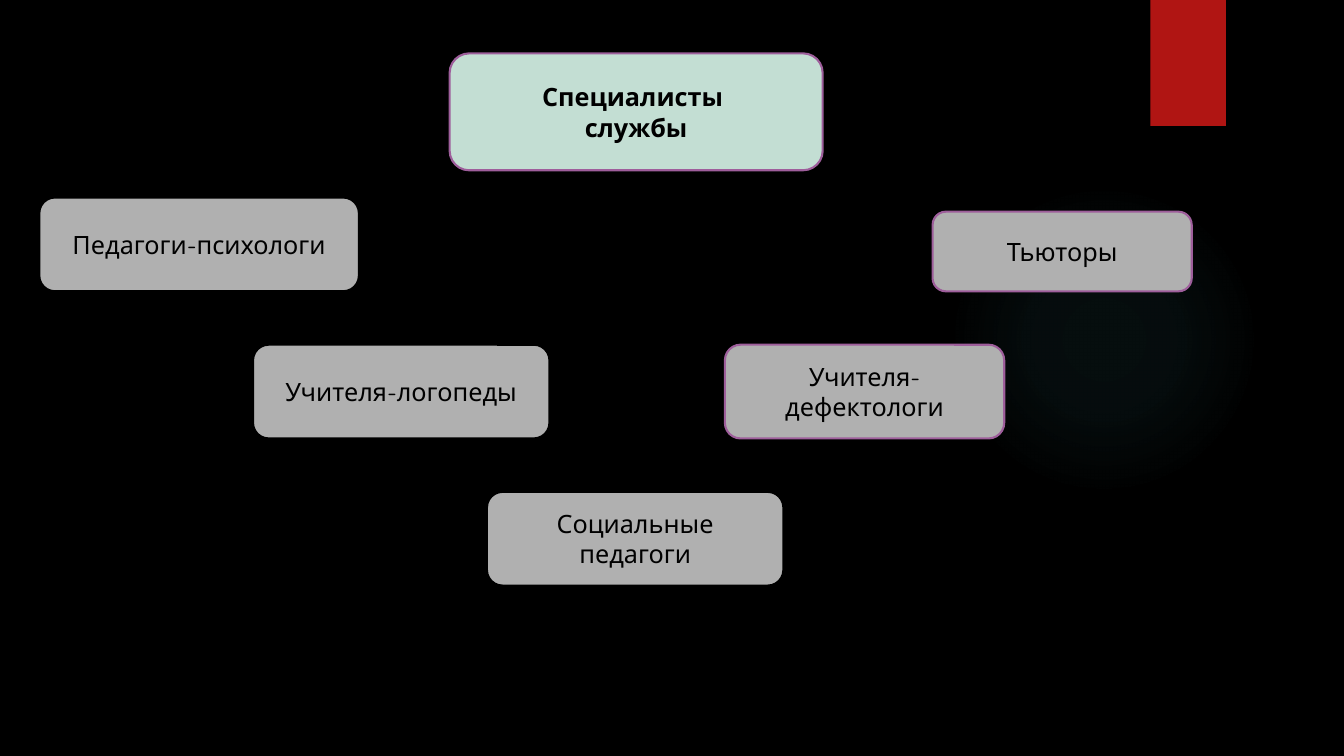
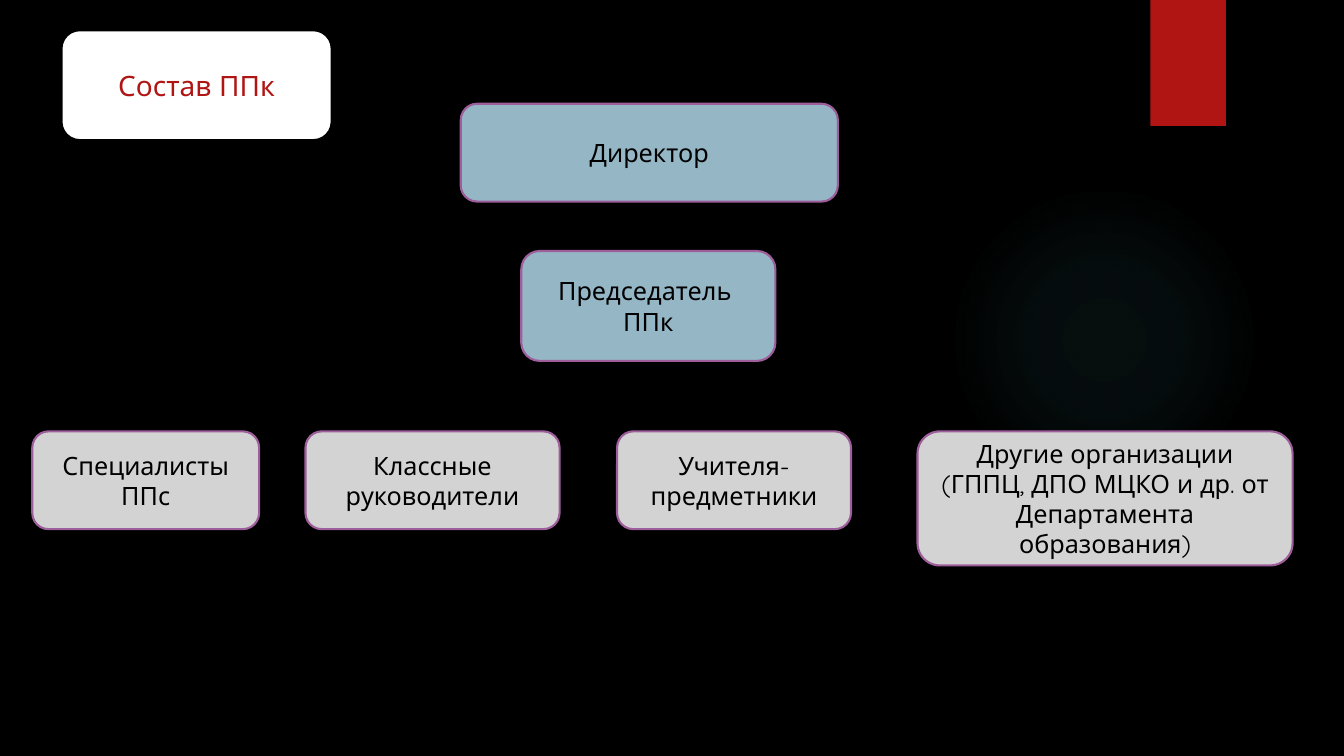
import pptx
import pptx.util
import pptx.oxml
import pptx.oxml.ns
import pptx.dml.color
import pptx.enum.shapes
import pptx.enum.text

RGB = pptx.dml.color.RGBColor
KIND = pptx.enum.shapes.MSO_SHAPE
UNIT = 9144
BLACK = RGB(0x00, 0x00, 0x00)
WHITE = RGB(0xFF, 0xFF, 0xFF)
RED = RGB(0xB0, 0x15, 0x13)
MINT = RGB(0xC3, 0xDE, 0xD3)
GREY = RGB(0xB0, 0xB0, 0xB0)
PALE = RGB(0xD3, 0xD3, 0xD3)
BLUE = RGB(0x95, 0xB6, 0xC5)
PLUM = RGB(0x9E, 0x5E, 0x9B)
TEAL = RGB(0x50, 0xB9, 0xC1)
FONT = {"name": "Quicksand", "size": pptx.util.Pt(18), "bold": False}
HEAD = {"bold": True}
TITLE = {"size": pptx.util.Pt(20)}
STOPS = ((0, 7), (36, 6), (69, 0))


def place(slide, kind, box):
    shape = slide.shapes.add_shape(kind, *(n * UNIT for n in box))
    shape.shadow.inherit = False
    return shape


def glow(slide, box):
    shape = place(slide, KIND.OVAL, box)
    shape.line.fill.background()
    stops = "".join(
        f'<a:gs pos="{pos * 1000}"><a:srgbClr val="{TEAL}">'
        f'<a:alpha val="{alpha * 1000}"/></a:srgbClr></a:gs>'
        for pos, alpha in STOPS
    )
    fill = pptx.oxml.parse_xml(
        f'<a:gradFill {pptx.oxml.ns.nsdecls("a")}><a:gsLst>{stops}</a:gsLst>'
        '<a:path path="circle"><a:fillToRect l="50000" t="50000" '
        'r="50000" b="50000"/></a:path></a:gradFill>'
    )
    shape.fill.background()
    old = shape._element.spPr.find(pptx.oxml.ns.qn("a:noFill"))
    old.getparent().replace(old, fill)


def ribbon(slide, box):
    shape = place(slide, KIND.RECTANGLE, box)
    shape.fill.solid()
    shape.fill.fore_color.rgb = RED
    shape.line.fill.background()


def card(slide, box, text, fill, edge=PLUM, ink=BLACK, style={}):
    shape = place(slide, KIND.ROUNDED_RECTANGLE, box)
    shape.fill.solid()
    shape.fill.fore_color.rgb = fill
    shape.line.color.rgb = edge
    shape.line.width = pptx.util.Pt(1.5)
    frame = shape.text_frame
    frame.word_wrap = True
    frame.vertical_anchor = pptx.enum.text.MSO_ANCHOR.MIDDLE
    frame.text = text
    for par in frame.paragraphs:
        par.alignment = pptx.enum.text.PP_ALIGN.CENTER
        for run in par.runs:
            run.font.color.rgb = ink
            for key, value in {**FONT, **style}.items():
                setattr(run.font, key, value)


def start(deck):
    slide = deck.slides.add_slide(deck.slide_layouts[6])
    glow(slide, (941, 183, 308, 308))
    ribbon(slide, (1141, 0, 75, 125))
    return slide


def staff(deck):
    slide = start(deck)
    card(slide, (446, 53, 370, 116), "Специалисты \nслужбы", MINT, style=HEAD)
    steps = (
        (39, 317, "Педагоги-психологи"),
        (251, 294, "Учителя-логопеды"),
        (483, 294, "Социальные педагоги"),
    )
    for row, (left, width, text) in enumerate(steps):
        card(slide, (left, 196 + 146 * row, width, 93), text, GREY, BLACK)
    card(slide, (719, 342, 277, 93), "Учителя-дефектологи", GREY)
    card(slide, (925, 210, 257, 79), "Тьюторы", GREY)


def council(deck):
    slide = start(deck)
    card(slide, (61, 30, 268, 109), "Состав ППк", WHITE, BLACK, RED, TITLE)
    card(slide, (457, 103, 374, 97), "Директор", BLUE)
    card(slide, (517, 249, 252, 109), "Председатель \nППк", BLUE)
    team = (
        (32, 225, 97, "Специалисты\nППс"),
        (303, 252, 97, "Классные руководители"),
        (612, 232, 97, "Учителя- предметники"),
        (910, 372, 133, "Другие организации\n"
         "(ГППЦ, ДПО МЦКО и др. от Департамента образования)"),
    )
    for left, width, height, text in team:
        card(slide, (left, 428, width, height), text, PALE)


def main():
    deck = pptx.Presentation()
    deck.slide_width = 1333 * UNIT
    deck.slide_height = 750 * UNIT
    back = deck.slide_master.background.fill
    back.solid()
    back.fore_color.rgb = BLACK
    staff(deck)
    council(deck)
    deck.save("out.pptx")


if __name__ == "__main__":
    main()
